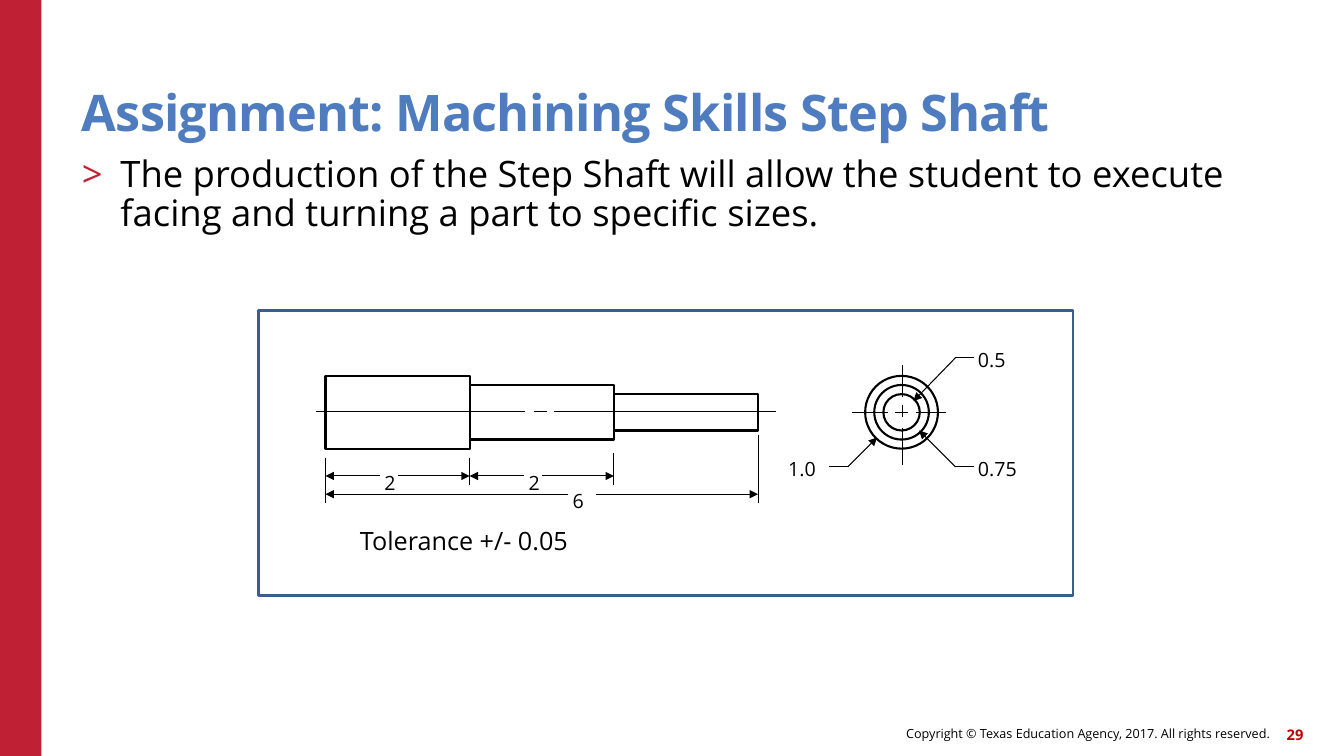
from lxml.etree import SubElement
from pptx import Presentation
from pptx.dml.color import RGBColor
from pptx.enum.shapes import MSO_CONNECTOR, MSO_SHAPE
from pptx.enum.text import MSO_ANCHOR, MSO_AUTO_SIZE, PP_ALIGN
from pptx.oxml.ns import qn
from pptx.util import Pt

BLACK = RGBColor(0, 0, 0)
WHITE = RGBColor(255, 255, 255)
CRIMSON = RGBColor(0xC0, 0x20, 0x33)
RED = RGBColor(0xC0, 0, 0)
BLUE = RGBColor(0x4E, 0x7C, 0xBE)
NAVY = RGBColor(0x3A, 0x5F, 0x8C)

AXIS = 294.5
LEFT = 232.5
STEP = 103
RING = 644
SIZES = (52, 39, 26)


def apply(target, values):
    for name, value in values.items():
        setattr(target, name, value)


def place(shape, box):
    names = ("left", "top", "width", "height")
    apply(shape, {name: Pt(value) for name, value in zip(names, box)})


def write(shape, text, size, color=BLACK, bold=False, inset=(0, 0),
          anchor=MSO_ANCHOR.TOP, **layout):
    """Fill a shape with one formatted paragraph and return it."""
    frame = shape.text_frame
    across, down = map(Pt, inset)
    apply(frame, {"word_wrap": True, "auto_size": MSO_AUTO_SIZE.NONE,
                  "vertical_anchor": anchor,
                  "margin_left": across, "margin_right": across,
                  "margin_top": down, "margin_bottom": down})
    para = frame.paragraphs[0]
    apply(para, {"alignment": PP_ALIGN.LEFT, "space_before": Pt(0), **layout})
    run = para.add_run()
    run.text = text
    apply(run.font, {"name": "Open Sans", "size": Pt(size), "bold": bold})
    run.font.color.rgb = color
    return para


def label(slide, box, text, size, **style):
    shape = slide.shapes.add_textbox(*map(Pt, box))
    write(shape, text, size, **style)


def outline(slide, kind, box, fill=None, line=None, width=1.5):
    shape = slide.shapes.add_shape(kind, *map(Pt, box))
    shape.shadow.inherit = False
    if fill is None:
        shape.fill.background()
    else:
        shape.fill.solid()
        shape.fill.fore_color.rgb = fill
    if line is None:
        shape.line.fill.background()
    else:
        shape.line.color.rgb = line
        shape.line.width = Pt(width)


def stroke(slide, start, end, arrow=False):
    link = slide.shapes.add_connector(
        MSO_CONNECTOR.STRAIGHT, *map(Pt, (*start, *end)))
    link.line.color.rgb = BLACK
    link.line.width = Pt(0.75)
    props = link.element.spPr
    if arrow:
        SubElement(props.find(qn("a:ln")), qn("a:tailEnd"), type="triangle")
    SubElement(props, qn("a:effectLst"))


def measure(slide, y, ends, gap, text):
    """Draw a dimension line whose number sits in the gap."""
    for end, start in zip(ends, gap):
        stroke(slide, (start, y), (end, y), arrow=True)
    label(slide, (gap[0], y - 6.5, gap[1] - gap[0], 19), text, 14,
          inset=(3, 3))


def leader(slide, tip, bend, shelf, box_x, text):
    stroke(slide, bend, tip, arrow=True)
    stroke(slide, bend, (shelf, bend[1]))
    label(slide, (box_x, bend[1] - 10, 39, 19), text, 14, inset=(3, 3))


def head(slide):
    title = slide.shapes.title
    place(title, (58.5, 32.5, 792, 69))
    para = write(title, "Assignment: Machining Skills Step Shaft", 36,
                 color=BLUE, bold=True, anchor=MSO_ANCHOR.BOTTOM,
                 line_spacing=0.9)
    para.runs[0].font._element.set("spc", "-60")


def body(slide):
    holder = slide.placeholders[1]
    place(holder, (58.5, 111.5, 870.5, 70))
    para = write(holder, "The production of the Step Shaft will allow the "
                 "student to execute facing and turning a part to specific "
                 "sizes.", 26, line_spacing=0.9)
    props = para._p.get_or_add_pPr()
    apply_indent = {"marL": str(Pt(27.5)), "indent": str(-Pt(27.5))}
    for name, value in apply_indent.items():
        props.set(name, value)
    tint = SubElement(props, qn("a:buClr"))
    SubElement(tint, qn("a:srgbClr"), val=str(CRIMSON))
    SubElement(props, qn("a:buFont"), typeface="Open Sans")
    SubElement(props, qn("a:buChar"), char=">")


def shaft(slide):
    """Draw the side view with its centre line and dimensions."""
    edges = [LEFT + STEP * step for step in range(4)]
    for x, size in zip(edges, SIZES):
        outline(slide, MSO_SHAPE.RECTANGLE,
                (x, AXIS - size / 2, STEP, size), line=BLACK)
    for x, top, end in zip(edges, (327, 327, 323.5, 310.5),
                           (359.5, 346.5, 346.5, 359.5)):
        stroke(slide, (x, top), (x, end))
    for start, end in ((226, 375), (381.5, 390.5), (395.5, 554.5)):
        stroke(slide, (start, AXIS - 0.5), (end, AXIS - 0.5))
    for x in edges[:2]:
        measure(slide, 340, (x, x + STEP), (x + 39, x + 52), "2")
    measure(slide, 353, (edges[0], edges[3]), (406, 425.5), "6")


def rings(slide):
    """Draw the end view with its centre marks and diameters."""
    for size in SIZES:
        outline(slide, MSO_SHAPE.OVAL,
                (RING - size / 2, AXIS - size / 2, size, size), line=BLACK)
    for start, end in ((-35.5, -9.5), (-4.5, 4.5), (10.5, 32)):
        stroke(slide, (RING + start, AXIS), (RING + end, AXIS))
    for start, end in ((-33.5, -11), (-5.5, 3.5), (11, 38)):
        stroke(slide, (RING + 0.5, AXIS + start), (RING + 0.5, AXIS + end))
    leader(slide, (626.5, 312.5), (605.5, 333.5), 592.5, 560, "1.0")
    leader(slide, (656.5, 307.5), (682.5, 333.5), 695.5, 695.5, "0.75")
    leader(slide, (652.5, 286.5), (682.5, 255.5), 695.5, 695.5, "0.5")


def footer(slide):
    style = {"anchor": MSO_ANCHOR.MIDDLE, "alignment": PP_ALIGN.RIGHT}
    label(slide, (442, 512.5, 465, 23), "Copyright © Texas Education Agency, "
          "2017. All rights reserved.", 9, **style)
    label(slide, (900.5, 513.5, 30.5, 23), "29", 10.5, color=RED, bold=True,
          **style)


def main():
    deck = Presentation()
    apply(deck, {"slide_width": Pt(960), "slide_height": Pt(540)})
    slide = deck.slides.add_slide(deck.slide_layouts[1])
    outline(slide, MSO_SHAPE.RECTANGLE, (0, 0, 29.5, 540), fill=CRIMSON)
    footer(slide)
    head(slide)
    body(slide)
    outline(slide, MSO_SHAPE.RECTANGLE, (184.5, 221.5, 582, 204),
            fill=WHITE, line=NAVY, width=2)
    shaft(slide)
    rings(slide)
    label(slide, (250, 371.5, 276, 29), "Tolerance +/- 0.05", 18,
          inset=(7.2, 3.6))
    deck.save("out.pptx")


if __name__ == "__main__":
    main()
